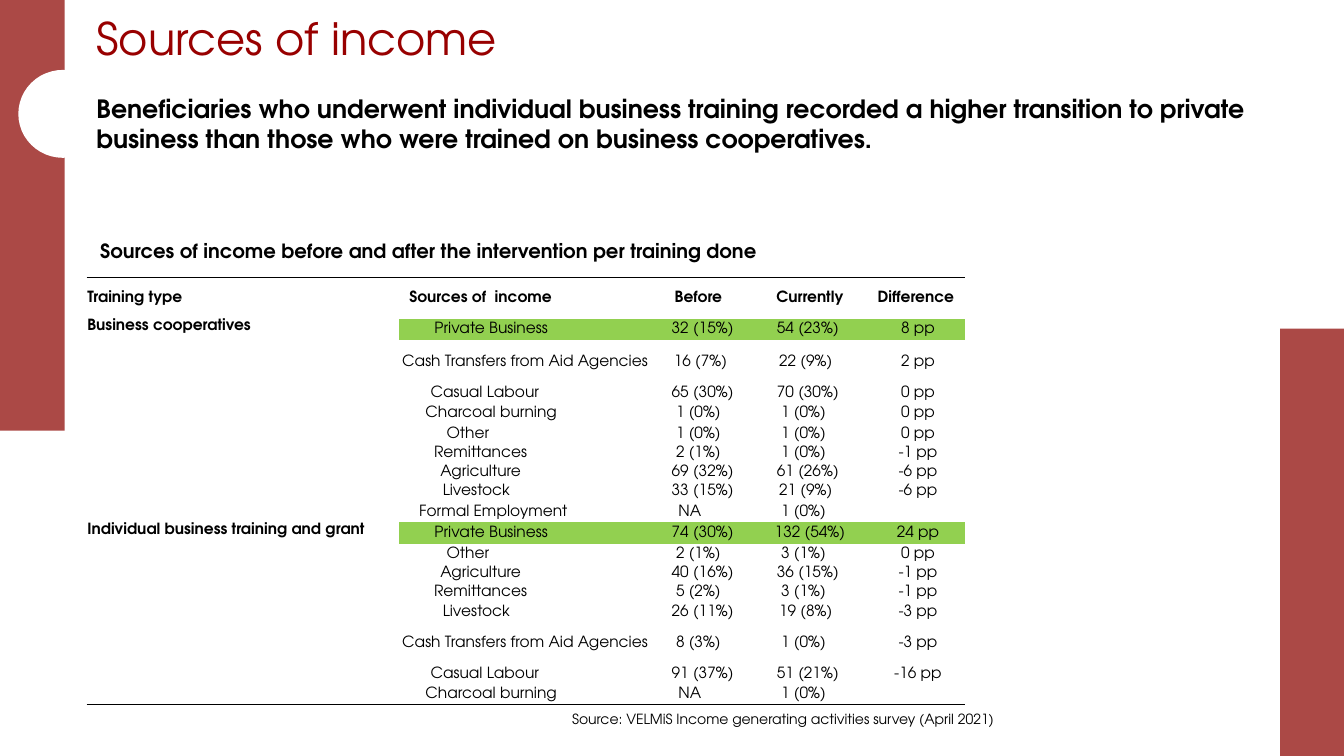
import pptx
import pptx.util
import pptx.dml.color
import pptx.enum.shapes
import pptx.enum.text
import pptx.oxml
import pptx.oxml.ns

Cm = pptx.util.Cm
Pt = pptx.util.Pt
ALIGN = pptx.enum.text.PP_ALIGN
ANCHOR = pptx.enum.text.MSO_ANCHOR
SHAPES = pptx.enum.shapes.MSO_SHAPE

HEADINGS = ["Training type", "Sources of  income", "Before", "Currently", "Difference"]
TRAININGS = {
    "Business cooperatives": [
        ("Private Business", "32 (15%)", "54 (23%)", "8 pp"),
        ("Cash Transfers from Aid Agencies", "16 (7%)", "22 (9%)", "2 pp"),
        ("Casual Labour", "65 (30%)", "70 (30%)", "0 pp"),
        ("Charcoal burning", "1 (0%)", "1 (0%)", "0 pp"),
        ("Other", "1 (0%)", "1 (0%)", "0 pp"),
        ("Remittances", "2 (1%)", "1 (0%)", "-1 pp"),
        ("Agriculture", "69 (32%)", "61 (26%)", "-6 pp"),
        ("Livestock", "33 (15%)", "21 (9%)", "-6 pp"),
        ("Formal Employment", "NA", "1 (0%)", ""),
    ],
    "Individual business training and grant": [
        ("Private Business", "74 (30%)", "132 (54%)", "24 pp"),
        ("Other", "2 (1%)", "3 (1%)", "0 pp"),
        ("Agriculture", "40 (16%)", "36 (15%)", "-1 pp"),
        ("Remittances", "5 (2%)", "3 (1%)", "-1 pp"),
        ("Livestock", "26 (11%)", "19 (8%)", "-3 pp"),
        ("Cash Transfers from Aid Agencies", "8 (3%)", "1 (0%)", "-3 pp"),
        ("Casual Labour", "91 (37%)", "51 (21%)", "-16 pp"),
        ("Charcoal burning", "NA", "1 (0%)", ""),
    ],
}
COLUMN_WIDTHS = [7.87, 6.48, 2.46, 2.95, 2.39]
HEADING_ROW, TALL_ROW, MEDIUM_ROW, SHORT_ROW = 1.04, 1.08, 0.54, 0.47
MEDIUM_SOURCES = ("Private Business", "Charcoal burning", "Formal Employment")
HEADING_CHARS = [0, 40, 9, 10, 11]
VALUE_CHARS = [33, 9, 10, 0]
CHAR_GAP = 0.107
PLAIN_TABLE = "{2D5ABB26-0587-4C30-8999-92F81FD0307C}"


def rgb(color):
    return pptx.dml.color.RGBColor.from_string(color)


def row_height(source):
    if source.startswith("Cash"):
        return TALL_ROW
    return MEDIUM_ROW if source in MEDIUM_SOURCES else SHORT_ROW


def unused_width(text, chars):
    return max(chars - len(text), 0) * CHAR_GAP


class IncomeSlide:
    """Draws the elements of the income slide in one shared style."""

    font = "TeX Gyre Adventor"
    black, white, title_red = "000000", "FFFFFF", "980000"
    band_red, highlight = "AB4946", "92D050"

    def __init__(self, deck):
        self.slide = deck.slides.add_slide(deck.slide_layouts[6])

    def shape(self, kind, left, top, width, height, color, outlined=False):
        shape = self.slide.shapes.add_shape(kind, Cm(left), Cm(top), Cm(width), Cm(height))
        shape.shadow.inherit = False
        shape.fill.solid()
        shape.fill.fore_color.rgb = rgb(color)
        if outlined:
            shape.line.color.rgb = rgb(color)
            shape.line.width = Pt(1)
        else:
            shape.line.fill.background()

    def style(self, paragraph, size, color, bold, align):
        paragraph.alignment = align
        paragraph.font.name = self.font
        paragraph.font.size = Pt(size)
        paragraph.font.bold = bold
        paragraph.font.color.rgb = rgb(color)

    def text(self, words, left, top, width, height, size, color=black, bold=False,
             align=ALIGN.LEFT, wrap=True, anchor=ANCHOR.TOP, spacing=None):
        box = self.slide.shapes.add_textbox(Cm(left), Cm(top), Cm(width), Cm(height))
        frame = box.text_frame
        frame.word_wrap = wrap
        frame.vertical_anchor = anchor
        paragraph = frame.paragraphs[0]
        paragraph.text = words
        paragraph.line_spacing = spacing
        self.style(paragraph, size, color, bold, align)

    def table(self, left, top, widths, heights):
        frame = self.slide.shapes.add_table(
            len(heights), len(widths), Cm(left), Cm(top), Cm(sum(widths)), Cm(sum(heights)))
        table = frame.table
        table.first_row = table.horz_banding = False
        table._tbl.tblPr.find(pptx.oxml.ns.qn("a:tableStyleId")).text = PLAIN_TABLE
        for column, width in zip(table.columns, widths):
            column.width = Cm(width)
        for row, height in zip(table.rows, heights):
            row.height = Cm(height)
            for cell in row.cells:
                self.cell(cell, "")
        return table

    def cell(self, cell, words, bold=False, align=ALIGN.CENTER, anchor=ANCHOR.MIDDLE,
             indent=0, fill=None):
        cell.margin_left = cell.margin_top = Cm(0.02)
        cell.margin_right = Cm(0.02 + indent)
        cell.margin_bottom = 0
        cell.vertical_anchor = anchor
        paragraph = cell.text_frame.paragraphs[0]
        paragraph.text = words
        self.style(paragraph, 11, self.black, bold, align)
        if not words:
            paragraph._p.get_or_add_endParaRPr().set("sz", "1100")
        if fill:
            cell.fill.solid()
            cell.fill.fore_color.rgb = rgb(fill)
        else:
            cell.fill.background()

    def rule(self, cells, side):
        for cell in cells:
            border = pptx.oxml.parse_xml(
                f'<a:{side} {pptx.oxml.ns.nsdecls("a")} w="12700"><a:solidFill>'
                f'<a:srgbClr val="{self.black}"/></a:solidFill></a:{side}>')
            cell._tc.get_or_add_tcPr().insert(0, border)

    def income_table(self, left, top):
        heights = [HEADING_ROW] + [
            row_height(source[0]) for sources in TRAININGS.values() for source in sources]
        table = self.table(left, top, COLUMN_WIDTHS, heights)
        for column, (heading, chars) in enumerate(zip(HEADINGS, HEADING_CHARS)):
            self.cell(table.cell(0, column), heading, bold=True,
                      align=ALIGN.CENTER if column else ALIGN.LEFT,
                      indent=unused_width(heading, chars))
        first = 1
        for training, sources in TRAININGS.items():
            last = first + len(sources) - 1
            training_cell = table.cell(first, 0)
            training_cell.merge(table.cell(last, 0))
            self.cell(training_cell, training, bold=True,
                      align=ALIGN.LEFT, anchor=ANCHOR.TOP)
            for row, values in enumerate(sources, first):
                fill = self.highlight if row == first else None
                for column, (value, chars) in enumerate(zip(values, VALUE_CHARS), 1):
                    self.cell(table.cell(row, column), value,
                              indent=unused_width(value, chars), fill=fill)
            first = last + 1
        self.rule(table.rows[0].cells, "lnT")
        self.rule([training_cell, *list(table.rows[last].cells)[1:]], "lnB")


def main():
    deck = pptx.Presentation()
    deck.slide_width, deck.slide_height = Cm(33.87), Cm(19.05)
    income = IncomeSlide(deck)
    for left, top in ((0, 0), (32.26, 8.28)):
        income.shape(SHAPES.RECTANGLE, left, top, 1.63, 10.85, income.band_red)
    income.shape(SHAPES.OVAL, 0.48, 1.78, 2.21, 2.18, income.white, outlined=True)
    income.text("Sources of income", 2.18, 0.13, 27.97, 1.8, 32, income.title_red,
                anchor=ANCHOR.MIDDLE, spacing=0.9)
    income.text("Beneficiaries who underwent individual business training recorded a higher "
                "transition to private business than those who were trained on business "
                "cooperatives.", 2.18, 2.22, 31.06, 1.8, 18, bold=True)
    income.text("Sources of income before and after the intervention per training done",
                2.12, 5.89, 17.37, 0.86, 14, bold=True, align=ALIGN.CENTER, wrap=False)
    income.text("Source: VELMiS Income generating activities survey (April 2021)",
                14.17, 17.78, 11.48, 0.69, 10)
    income.income_table(2.18, 6.99)
    deck.save("out.pptx")


if __name__ == "__main__":
    main()
